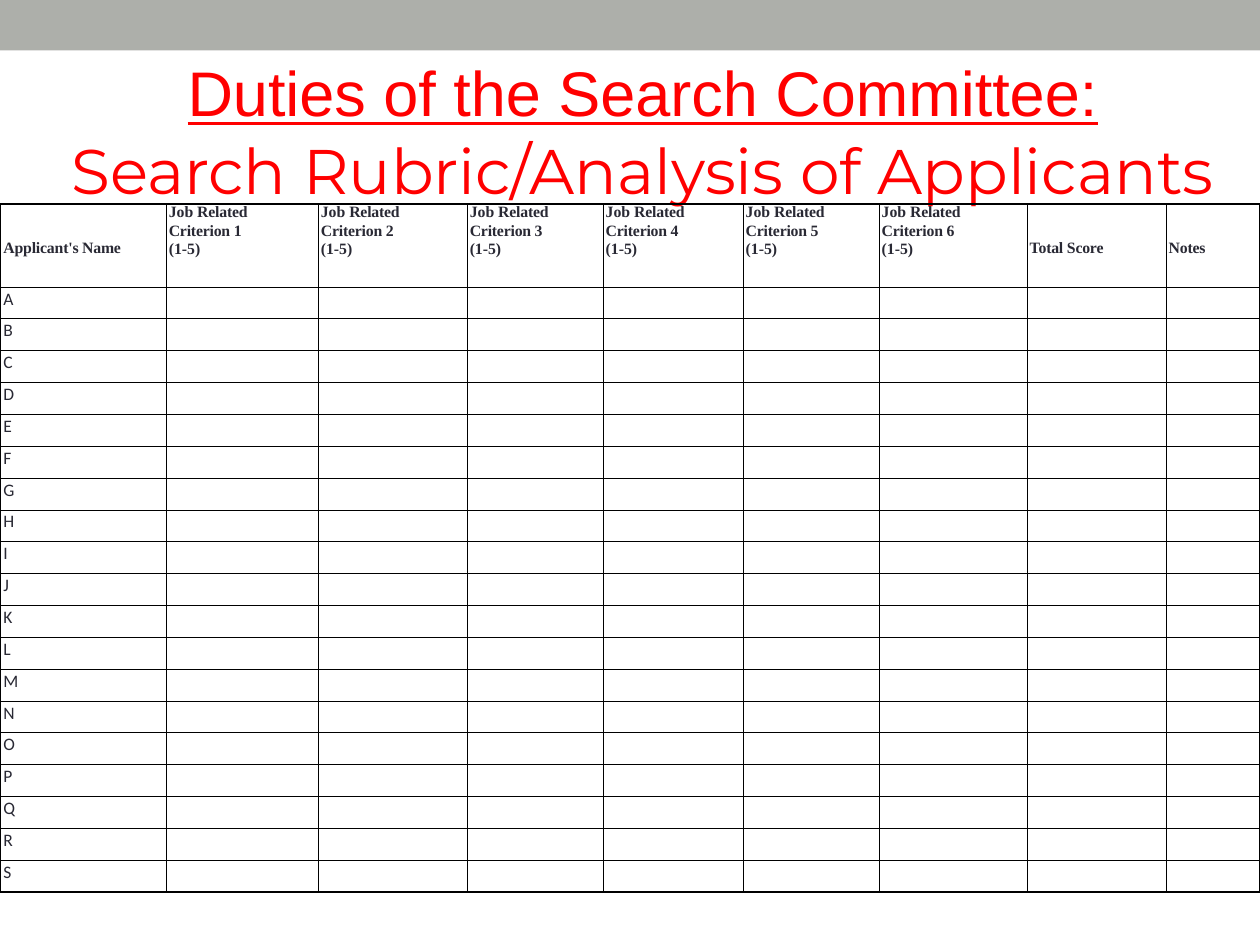
from dataclasses import dataclass

from lxml import etree
from pptx import Presentation
from pptx.dml.color import RGBColor
from pptx.enum.shapes import MSO_SHAPE
from pptx.enum.text import MSO_ANCHOR, MSO_AUTO_SIZE, PP_ALIGN
from pptx.oxml.ns import qn
from pptx.util import Pt

RECTANGLE = MSO_SHAPE.RECTANGLE
BOTTOM = MSO_ANCHOR.BOTTOM
TOP = MSO_ANCHOR.TOP
NO_AUTOFIT = MSO_AUTO_SIZE.NONE
CENTER = PP_ALIGN.CENTER

GRAY = RGBColor(0xAD, 0xAF, 0xAA)
RED = RGBColor(0xFF, 0x00, 0x00)
INK = RGBColor(0x29, 0x29, 0x34)
BLACK = RGBColor(0x00, 0x00, 0x00)

SLIDE_WIDTH, SLIDE_HEIGHT = 720, 540
BAND_HEIGHT = 28.8
TABLE_TOP = 116.6
COLUMN_WIDTHS = [94.9, 86.9, 85.1, 77.7, 80, 77.7, 84.6, 79.4, 53.7]
HEADER_HEIGHT, ROW_HEIGHT = 47.3, 18.2
APPLICANTS = "ABCDEFGHIJKLMNOPQRS"
OUTER_LINE, INNER_LINE = 1, 0.25
TITLE_FORMAT = {"size": Pt(36), "bold": False}
HEADER_FORMAT = {"name": "Times New Roman", "size": Pt(9), "bold": True}
APPLICANT_FORMAT = {"name": "Calibri", "size": Pt(10), "bold": False}


@dataclass
class Span:
    text: str
    tracking: float = 0


@dataclass
class Line:
    spans: list[Span]
    spacing: float | None = None
    before: float = 0


@dataclass
class Entry:
    """The content of one table cell."""
    lines: list[Line]
    font_format: dict
    top_margin: float = 0
    left_margin: float = 1.6


def apply_font(font, font_format: dict, color: RGBColor) -> None:
    for name, value in font_format.items():
        setattr(font, name, value)
    font.color.rgb = color


def add_title(slide) -> None:
    box = slide.shapes.title
    box.left, box.top, box.width, box.height = Pt(27.4), Pt(28.8), Pt(679.7), Pt(89.3)
    frame = box.text_frame
    frame_format = {"margin_left": 0, "margin_right": 0, "margin_top": Pt(0.7),
                    "margin_bottom": 0, "word_wrap": True,
                    "auto_size": NO_AUTOFIT, "vertical_anchor": BOTTOM}
    for name, value in frame_format.items():
        setattr(frame, name, value)
    lines = [("Duties of the Search Committee:", "Arial", True, 0),
             ("Search Rubric/Analysis of Applicants", "Montserrat", False, 0.9)]
    for index, (text, typeface, underline, before) in enumerate(lines):
        para = frame.add_paragraph() if index else frame.paragraphs[0]
        para.alignment = CENTER
        para.space_before = Pt(before)
        span = para.add_run()
        span.text = text
        apply_font(span.font, TITLE_FORMAT | {"name": typeface, "underline": underline}, RED)


def add_band(slide) -> None:
    band = slide.shapes.add_shape(RECTANGLE, 0, 0, Pt(SLIDE_WIDTH), Pt(BAND_HEIGHT))
    band.shadow.inherit = False
    band.fill.solid()
    band.fill.fore_color.rgb = GRAY
    band.line.fill.background()


def set_borders(cell, widths: dict[str, float]) -> None:
    properties = cell._tc.get_or_add_tcPr()
    for side, width in widths.items():
        line = etree.SubElement(properties, qn(f"a:ln{side}"), w=str(Pt(width)))
        fill = etree.SubElement(line, qn("a:solidFill"))
        etree.SubElement(fill, qn("a:srgbClr"), val=str(BLACK))


def fill_cell(cell, entry: Entry) -> None:
    cell.margin_left, cell.margin_top = Pt(entry.left_margin), Pt(entry.top_margin)
    cell.margin_right = cell.margin_bottom = 0
    cell.vertical_anchor = TOP
    frame = cell.text_frame
    for index, line in enumerate(entry.lines):
        para = frame.add_paragraph() if index else frame.paragraphs[0]
        para.space_before = Pt(line.before)
        if line.spacing:
            para.line_spacing = Pt(line.spacing)
        for part in line.spans:
            span = para.add_run()
            span.text = part.text
            apply_font(span.font, entry.font_format, INK)
            if part.tracking:
                span.font._element.set("spc", str(round(part.tracking * 100)))
        if not line.spans:
            # An empty cell takes its line height from the end mark.
            para._p.get_or_add_endParaRPr().set("sz", "1000")


def label_entry(text: str, left_margin: float = 1.6) -> Entry:
    return Entry([Line([Span(text, -0.1)])], HEADER_FORMAT, 20, left_margin)


def criterion_entry(number: int) -> Entry:
    return Entry([Line([Span("Job "), Span("Related", -0.1)], spacing=9.9),
                  Line([Span(f"Criterion {number}", -0.1)], before=0.6),
                  Line([Span("(1-5)")], before=0.6)], HEADER_FORMAT)


def applicant_row(letter: str) -> list[Entry]:
    name = Entry([Line([Span(letter)], spacing=13.1)], APPLICANT_FORMAT, left_margin=2)
    blank = Entry([Line([])], APPLICANT_FORMAT)
    return [name] + [blank] * (len(COLUMN_WIDTHS) - 1)


def add_rubric(slide) -> None:
    header = [label_entry("Applicant's Name", 2),
              *(criterion_entry(number) for number in range(1, 7)),
              label_entry("Total Score"), label_entry("Notes")]
    rows = [header] + [applicant_row(letter) for letter in APPLICANTS]
    heights = [HEADER_HEIGHT] + [ROW_HEIGHT] * len(APPLICANTS)
    table = slide.shapes.add_table(len(rows), len(COLUMN_WIDTHS), 0, Pt(TABLE_TOP),
                                   Pt(SLIDE_WIDTH), Pt(sum(heights))).table
    table.first_row = table.horz_banding = False
    for column, width in zip(table.columns, COLUMN_WIDTHS):
        column.width = Pt(width)
    for row, height in zip(table.rows, heights):
        row.height = Pt(height)
    last_row, last_column = len(rows) - 1, len(COLUMN_WIDTHS) - 1
    for r, entries in enumerate(rows):
        for c, entry in enumerate(entries):
            cell = table.cell(r, c)
            outer = {"L": c == 0, "R": c == last_column, "T": r == 0, "B": r == last_row}
            set_borders(cell, {side: OUTER_LINE if edge else INNER_LINE
                               for side, edge in outer.items()})
            cell.fill.background()
            fill_cell(cell, entry)


def main() -> None:
    deck = Presentation()
    deck.slide_width, deck.slide_height = Pt(SLIDE_WIDTH), Pt(SLIDE_HEIGHT)
    slide = deck.slides.add_slide(deck.slide_layouts.get_by_name("Title Only"))
    add_band(slide)
    add_title(slide)
    add_rubric(slide)
    deck.save("out.pptx")


if __name__ == "__main__":
    main()
